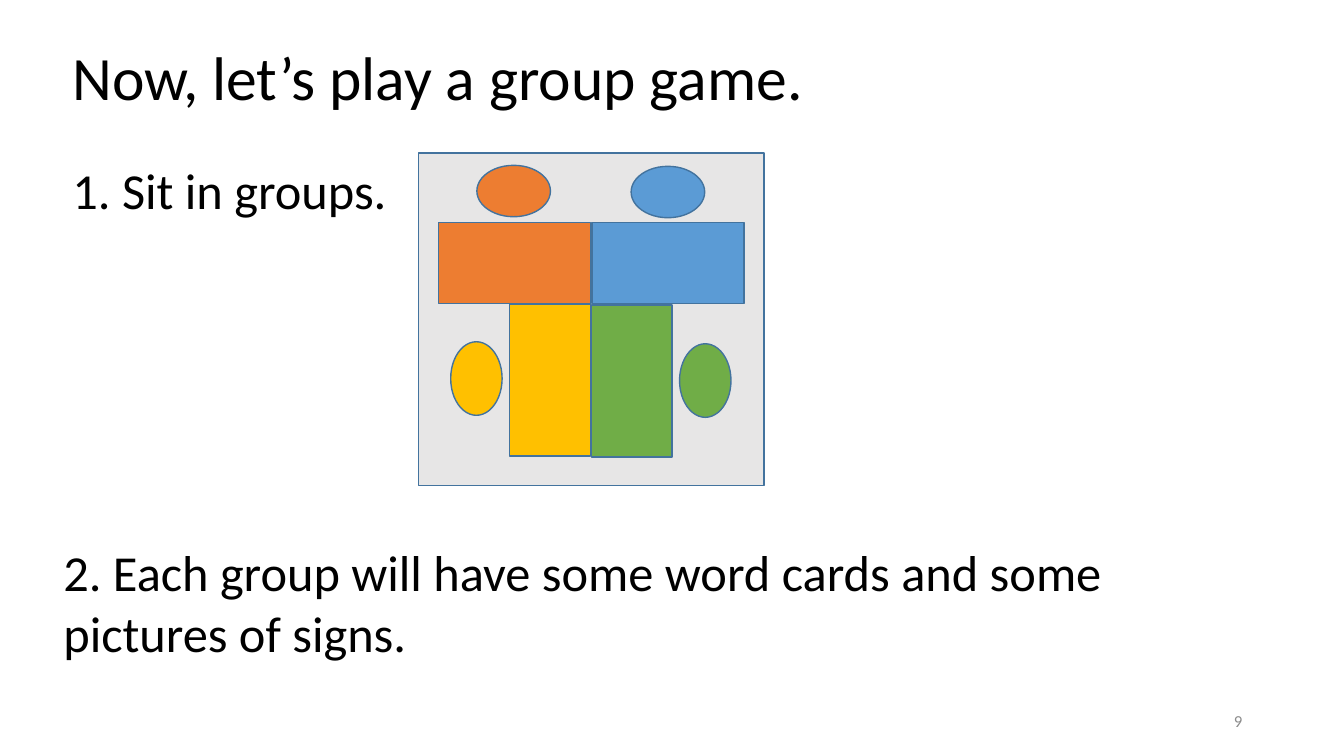
from pptx import Presentation
from pptx.dml.color import RGBColor
from pptx.enum import shapes, text
from pptx.util import Inches, Pt

COLOURS = {
    "black": "000000", "grey": "8C8C8C", "floor": "E7E6E6", "outline": "43739E",
    "orange": "ED7D31", "blue": "5B9BD5", "yellow": "FFC000", "green": "70AD47",
}
RECT = shapes.MSO_SHAPE.RECTANGLE
OVAL = shapes.MSO_SHAPE.OVAL
TOP, MIDDLE = text.MSO_ANCHOR.TOP, text.MSO_ANCHOR.MIDDLE
LEFT, RIGHT = text.PP_ALIGN.LEFT, text.PP_ALIGN.RIGHT

deck = Presentation()
deck.slide_width, deck.slide_height = Inches(13.33), Inches(7.5)
page = deck.slides.add_slide(deck.slide_layouts[6])


def add_text(words, area, size, colour="black", anchor=TOP, align=LEFT, spacing=1.0):
    box = page.shapes.add_textbox(*[Inches(length) for length in area])
    frame = box.text_frame
    frame.word_wrap = True
    frame.vertical_anchor = anchor
    para = frame.paragraphs[0]
    para.alignment = align
    para.line_spacing = spacing
    span = para.add_run()
    span.text = words
    span.font.name = "Calibri"
    span.font.size = Pt(size)
    span.font.color.rgb = RGBColor.from_string(COLOURS[colour])


def add_block(group, kind, area, colour, rotation=0):
    block = group.shapes.add_shape(kind, *[Inches(length) for length in area])
    block.rotation = rotation
    block.shadow.inherit = False
    block.fill.solid()
    block.fill.fore_color.rgb = RGBColor.from_string(COLOURS[colour])
    block.line.color.rgb = RGBColor.from_string(COLOURS["outline"])
    block.line.width = Pt(1)


# Title and instructions
add_text("Now, let’s play a group game.", (0.62, 0.07, 11.5, 1.45), 44,
         anchor=MIDDLE, spacing=0.9)
add_text("1. Sit in groups.", (0.62, 1.53, 6.64, 0.71), 36)
add_text("2. Each group will have some word cards and some pictures of signs.",
         (0.53, 5.32, 12.11, 1.31), 36)

# Seating plan: floor, then desks, then pupils
plan = page.shapes.add_group_shape()
add_block(plan, RECT, (4.15, 1.52, 3.43, 3.3), "floor")

desks = [("orange", 4.35, 2.21, 0), ("blue", 5.87, 2.21, 0),
         ("yellow", 4.7, 3.37, 270), ("green", 5.51, 3.38, 90)]
for colour, left, top, rotation in desks:
    add_block(plan, RECT, (left, top, 1.51, 0.8), colour, rotation)

pupils = [("orange", 4.73, 1.64, 0), ("blue", 6.26, 1.65, 0),
          ("yellow", 4.36, 3.5, 270), ("green", 6.63, 3.52, 270)]
for colour, left, top, rotation in pupils:
    add_block(plan, OVAL, (left, top, 0.73, 0.51), colour, rotation)

# Page number
add_text("9", (9.42, 6.95, 3, 0.4), 12, "grey", MIDDLE, RIGHT)

deck.save("out.pptx")
